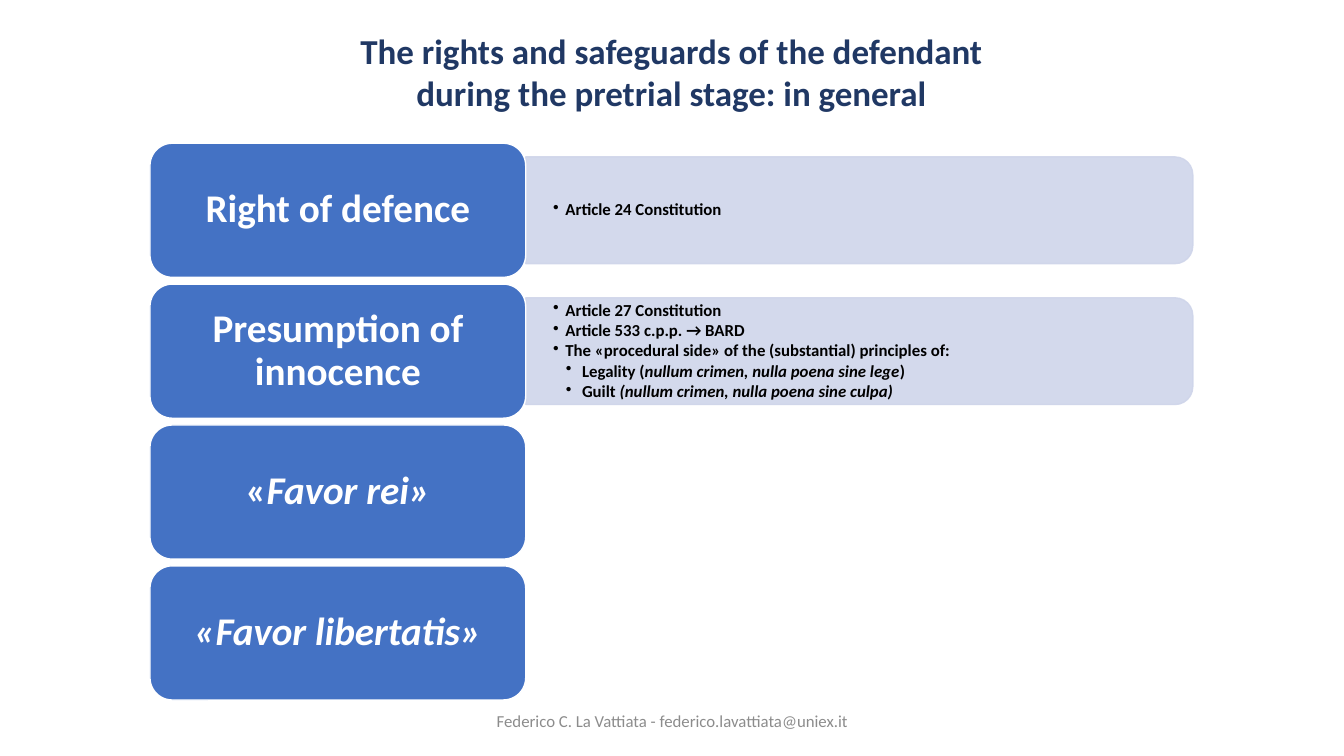
from lxml import etree
from pptx import Presentation
from pptx.dml.color import RGBColor
from pptx.enum.shapes import MSO_SHAPE
from pptx.enum.text import MSO_ANCHOR, PP_ALIGN
from pptx.oxml.ns import qn
from pptx.util import Cm, Pt

ROUNDED = MSO_SHAPE.ROUNDED_RECTANGLE
ROUNDED_TOP = MSO_SHAPE.ROUND_2_SAME_RECTANGLE
TOP, MIDDLE = MSO_ANCHOR.TOP, MSO_ANCHOR.MIDDLE
LEFT, CENTER = PP_ALIGN.LEFT, PP_ALIGN.CENTER

FONT = "Calibri"
NAVY, BLUE, PALE = "203864", "4472C4", "CFD5EA"
WHITE, BLACK, GREY = "FFFFFF", "000000", "8C8C8C"

CARD_LEFT, CARD_TOP, CARD_WIDTH, CARD_HEIGHT = 3.78, 3.61, 9.47, 3.38
CARD_STEP = 3.55
PANEL_WIDTH, PANEL_HEIGHT = 16.81, 2.69
BULLET_INDENTS = {1: (0.31, 0.31), 2: (0.73, 0.41)}

TITLE = [
    "The rights and safeguards of the defendant",
    "during the pretrial stage: in general",
]
FOOTER = "Federico C. La Vattiata - federico.lavattiata@uniex.it"
PRINCIPLES = [
    ([("Right of defence", False)],
     [(1, [("Article 24 Constitution", False)])]),
    ([("Presumption of innocence", False)],
     [(1, [("Article 27 Constitution", False)]),
      (1, [("Article 533 c.p.p. → BARD", False)]),
      (1, [("The «procedural side» of the (substantial) principles of:", False)]),
      (2, [("Legality (", False), ("nullum crimen, nulla poena sine lege", True),
           (")", False)]),
      (2, [("Guilt ", False), ("(nullum crimen, nulla poena sine culpa)", True)])]),
    ([("«", False), ("Favor rei»", True)], []),
    ([("«Favor libertatis»", True)], []),
]


def color(value):
    return RGBColor.from_string(value)


def prepare_frame(shape, anchor, horizontal=0.25, vertical=0.13):
    frame = shape.text_frame
    frame.word_wrap = True
    frame.vertical_anchor = anchor
    frame.margin_left = frame.margin_right = Cm(horizontal)
    frame.margin_top = frame.margin_bottom = Cm(vertical)
    return frame


def write_text(paragraph, text, size, font_color, bold=False, italic=False):
    run = paragraph.add_run()
    run.text = text
    run.font.name = FONT
    run.font.size = Pt(size)
    run.font.bold = bold
    run.font.italic = italic
    run.font.color.rgb = color(font_color)


def add_lines(slide, left, top, width, height, lines, anchor=TOP, **text_format):
    box = slide.shapes.add_textbox(Cm(left), Cm(top), Cm(width), Cm(height))
    frame = prepare_frame(box, anchor)
    for index, line in enumerate(lines):
        paragraph = frame.add_paragraph() if index else frame.paragraphs[0]
        paragraph.alignment = CENTER
        write_text(paragraph, line, **text_format)


def add_block(slide, kind, left, top, width, height, fill, line):
    shape = slide.shapes.add_shape(kind, Cm(left), Cm(top), Cm(width), Cm(height))
    shape.shadow.inherit = False
    shape.fill.solid()
    shape.fill.fore_color.rgb = color(fill)
    shape.line.color.rgb = color(line)
    shape.line.width = Pt(1)
    return shape


def set_transparency(shape, percent):
    for fill_color in shape.element.spPr.iter(qn("a:srgbClr")):
        alpha = etree.SubElement(fill_color, qn("a:alpha"))
        alpha.set("val", str(percent * 1000))


def set_bullet(paragraph, level):
    margin, hanging = BULLET_INDENTS[level]
    properties = paragraph._p.get_or_add_pPr()
    properties.set("marL", str(Cm(margin)))
    properties.set("indent", str(-Cm(hanging)))
    etree.SubElement(properties, qn("a:buChar")).set("char", "•")


def add_panel(slide, left, top, points):
    panel = add_block(slide, ROUNDED_TOP,
                      left + (PANEL_WIDTH - PANEL_HEIGHT) / 2,
                      top - (PANEL_WIDTH - PANEL_HEIGHT) / 2,
                      PANEL_HEIGHT, PANEL_WIDTH, PALE, PALE)
    panel.rotation = 90
    set_transparency(panel, 90)
    box = slide.shapes.add_textbox(Cm(left), Cm(top + 0.13), Cm(16.69), Cm(2.44))
    frame = prepare_frame(box, MIDDLE, 0.69, 0.36)
    for index, (level, pieces) in enumerate(points):
        paragraph = frame.add_paragraph() if index else frame.paragraphs[0]
        paragraph.alignment = LEFT
        paragraph.level = level
        paragraph.line_spacing = 0.9
        paragraph.space_after = Pt(1.6)
        set_bullet(paragraph, level)
        for text, italic in pieces:
            write_text(paragraph, text, 12, BLACK, bold=True, italic=italic)


def add_card(slide, top, pieces):
    card = add_block(slide, ROUNDED, CARD_LEFT, top, CARD_WIDTH, CARD_HEIGHT,
                     BLUE, WHITE)
    paragraph = prepare_frame(card, MIDDLE, 0.3, 0.3).paragraphs[0]
    paragraph.alignment = CENTER
    paragraph.line_spacing = 0.9
    for text, italic in pieces:
        write_text(paragraph, text, 28, WHITE, bold=True, italic=italic)


def main():
    presentation = Presentation()
    presentation.slide_width, presentation.slide_height = Cm(33.87), Cm(19.05)
    slide = presentation.slides.add_slide(presentation.slide_layouts[6])
    add_lines(slide, 11.23, 17.65, 11.43, 1.02, [FOOTER], anchor=MIDDLE,
              size=12, font_color=GREY)
    add_lines(slide, 1.83, 0.61, 30.18, 2.39, TITLE,
              size=25, font_color=NAVY, bold=True)
    for row, (heading, points) in enumerate(PRINCIPLES):
        top = CARD_TOP + row * CARD_STEP
        if points:
            add_panel(slide, CARD_LEFT + CARD_WIDTH,
                      top + (CARD_HEIGHT - PANEL_HEIGHT) / 2, points)
        add_card(slide, top, heading)
    presentation.save("out.pptx")


if __name__ == "__main__":
    main()
